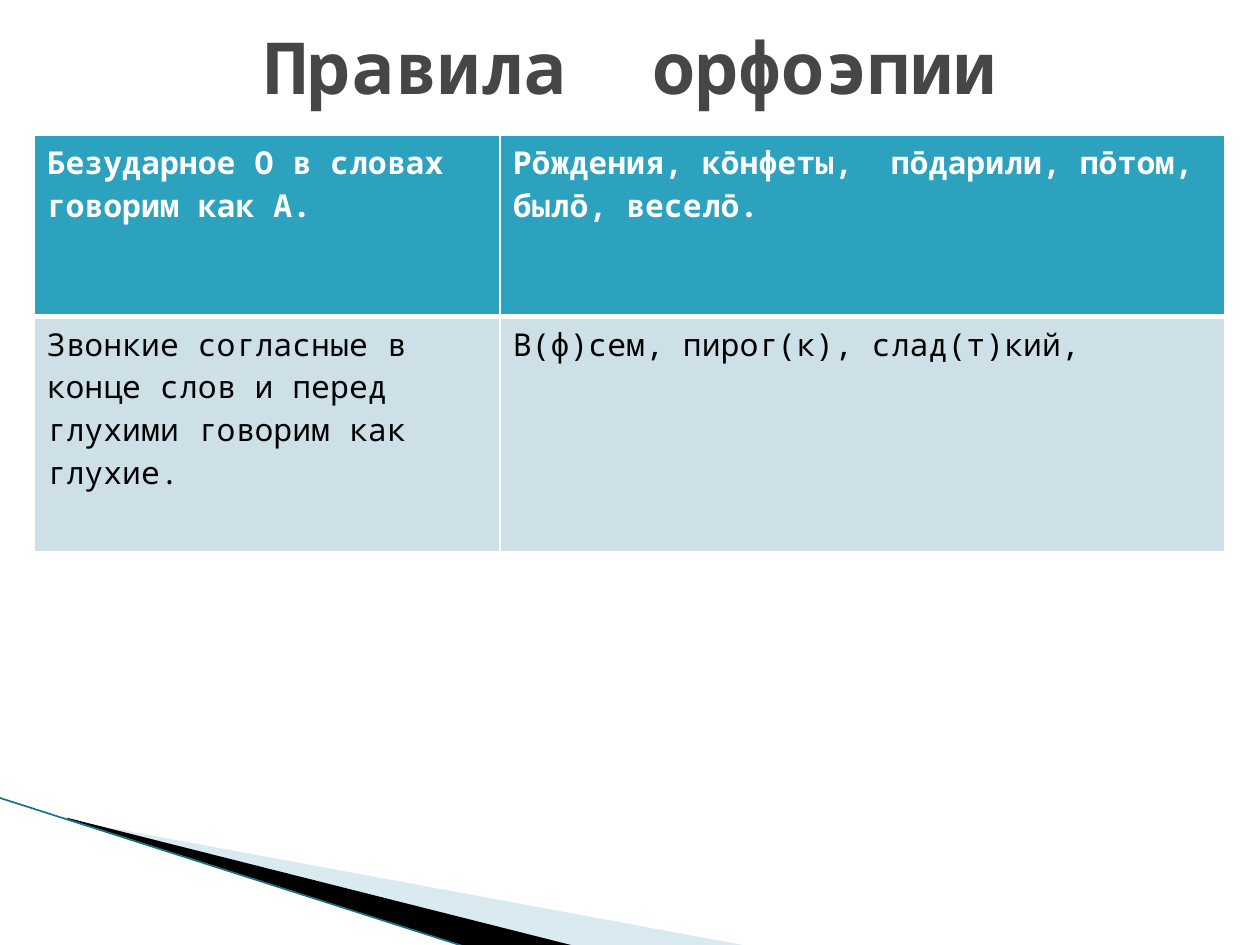
from lxml import etree
from pptx import Presentation
from pptx.dml.color import RGBColor
from pptx.enum.shapes import MSO_CONNECTOR
from pptx.enum.text import MSO_ANCHOR, PP_ALIGN
from pptx.oxml.ns import qn
from pptx.util import Inches, Pt

FONT = "Noto Sans Mono"
WHITE = RGBColor(0xFF, 0xFF, 0xFF)
BLACK = RGBColor(0x00, 0x00, 0x00)
GRAY = RGBColor(0x46, 0x46, 0x46)
TEAL = RGBColor(0x2D, 0xA2, 0xBF)
DARK_TEAL = RGBColor(0x1B, 0x72, 0x85)
PALE_TEAL = RGBColor(0xCD, 0xE0, 0xE8)
LIGHT_BLUE = RGBColor(0xA0, 0xCB, 0xDC)


def set_font(p, size, color, bold):
    for r in p.runs:
        r.font.name = FONT
        r.font.size = Pt(size)
        r.font.bold = bold
        r.font.color.rgb = color


def set_border(cell, side, width):
    ln = etree.SubElement(cell._tc.get_or_add_tcPr(), qn("a:" + side), w=str(Pt(width)))
    fill = etree.SubElement(ln, qn("a:solidFill"))
    etree.SubElement(fill, qn("a:srgbClr"), val=str(WHITE))


prs = Presentation()
prs.slide_width = Inches(10)
prs.slide_height = Inches(7.5)
s = prs.slides.add_slide(prs.slide_layouts[5])

wedges = [
    ([(0.55, 6.51), (5.95, 7.51), (4.56, 7.51), (0.55, 6.5)], LIGHT_BLUE, 40),
    ([(0.53, 6.49), (4.57, 7.51), (3.72, 7.52), (0.54, 6.5)], BLACK, 100),
]
for points, color, opacity in wedges:
    (x, y), *rest = [(Inches(px), Inches(py)) for px, py in points]
    fb = s.shapes.build_freeform(x, y)
    fb.add_line_segments(rest, close=True)
    sp = fb.convert_to_shape()
    sp.shadow.inherit = False
    sp.line.fill.background()
    sp.fill.solid()
    sp.fill.fore_color.rgb = color
    if opacity < 100:
        clr = sp._element.spPr.find(".//" + qn("a:srgbClr"))
        etree.SubElement(clr, qn("a:alpha"), val=str(opacity * 1000))

edge = s.shapes.add_connector(
    MSO_CONNECTOR.STRAIGHT, Inches(-0.01), Inches(6.33), Inches(3.71), Inches(7.52)
)
edge.line.color.rgb = DARK_TEAL
edge.line.width = Pt(0.95)
etree.SubElement(edge._element.spPr, qn("a:effectLst"))

rows = [
    ("Безударное О в словах говорим как А.",
     "Рōждения, кōнфеты,  пōдарили, пōтом,  былō, веселō."),
    ("Звонкие согласные в конце слов и перед глухими говорим как глухие.",
     "В(ф)сем, пирог(к), слад(т)кий,"),
]
styles = [(TEAL, WHITE, True, 3), (PALE_TEAL, BLACK, False, 1)]

table = s.shapes.add_table(
    2, 2, Inches(0.27), Inches(1.07), Inches(9.45), Inches(3.31)
).table
for col, width in zip(table.columns, (3.7, 5.75)):
    col.width = Inches(width)
for row, height in zip(table.rows, (1.44, 1.87)):
    row.height = Inches(height)

for i, (texts, (fill, color, bold, bottom)) in enumerate(zip(rows, styles)):
    for j, text in enumerate(texts):
        cell = table.cell(i, j)
        cell.text_frame.text = text
        set_font(cell.text_frame.paragraphs[0], 18, color, bold)
        top = styles[i - 1][3] if i else 1
        for side, width in zip(("lnL", "lnR", "lnT", "lnB"), (1, 1, top, bottom)):
            set_border(cell, side, width)
        cell.fill.solid()
        cell.fill.fore_color.rgb = fill

title = s.shapes.title
title.left, title.top = Inches(0.51), Inches(0.13)
title.width, title.height = Inches(9), Inches(0.79)
tf = title.text_frame
tf.text = "Правила  орфоэпии"
tf.word_wrap = True
tf.vertical_anchor = MSO_ANCHOR.MIDDLE
p = tf.paragraphs[0]
p.alignment = PP_ALIGN.CENTER
set_font(p, 41, GRAY, True)

prs.save("out.pptx")
